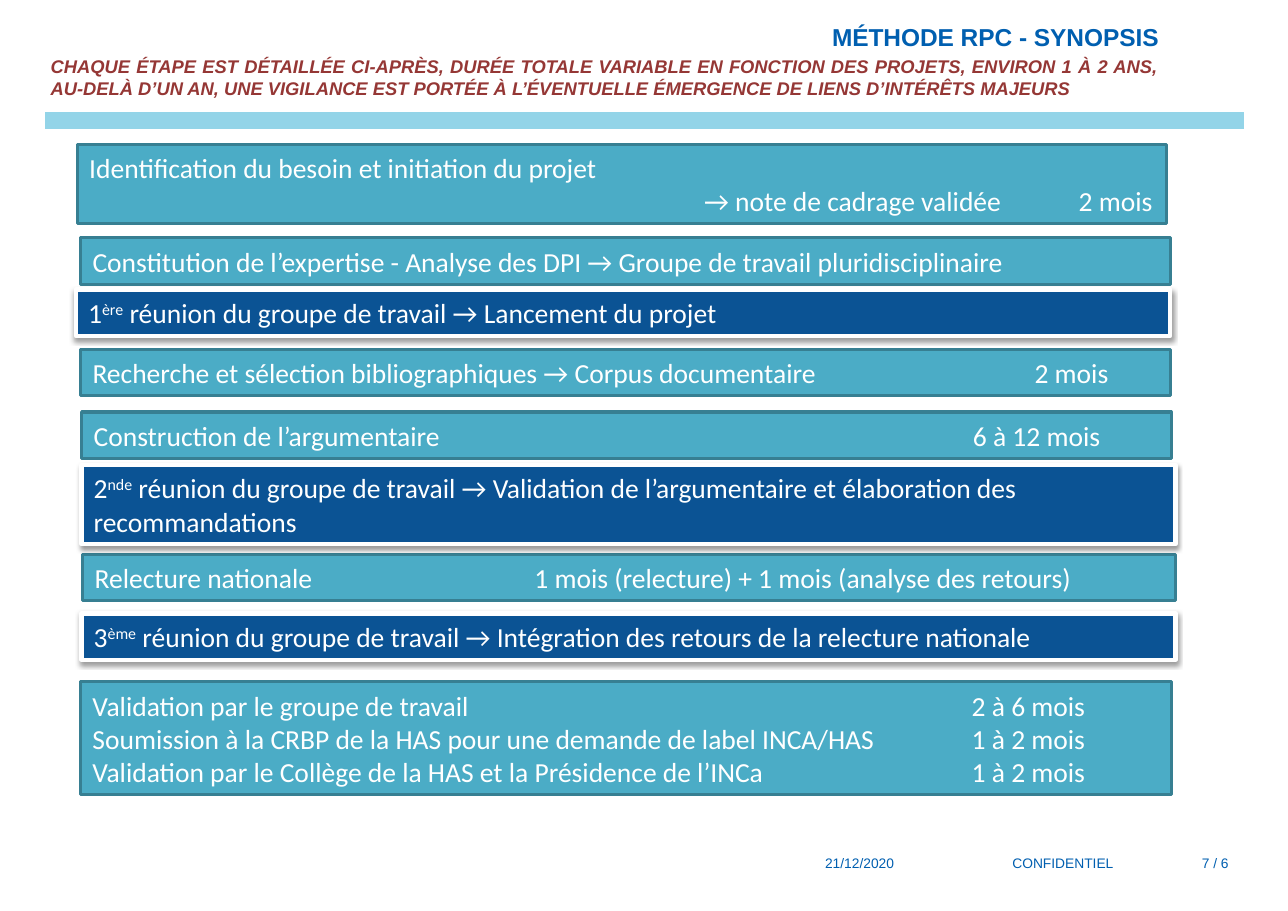
from lxml import etree
from pptx import Presentation
from pptx.dml.color import RGBColor
from pptx.enum.shapes import MSO_SHAPE
from pptx.enum.text import MSO_ANCHOR, MSO_AUTO_SIZE, PP_ALIGN
from pptx.oxml import parse_xml
from pptx.oxml.ns import nsdecls, qn
from pptx.util import Inches, Pt

BLUE = RGBColor(0x00, 0x5F, 0xB0)
BRICK = RGBColor(0x95, 0x37, 0x35)
SKY = RGBColor(0x93, 0xD4, 0xE8)
TEAL = RGBColor(0x4B, 0xAC, 0xC6)
DARK_TEAL = RGBColor(0x37, 0x7F, 0x92)
NAVY = RGBColor(0x0B, 0x53, 0x94)
WHITE = RGBColor(0xFF, 0xFF, 0xFF)

SHADOW = (
    f'<a:effectLst {nsdecls("a")}>'
    '<a:outerShdw blurRad="39370" dist="20320" dir="5400000" rotWithShape="0">'
    '<a:srgbClr val="000000"><a:alpha val="38000"/></a:srgbClr>'
    '</a:outerShdw></a:effectLst>'
)


def add_bar(box, fill, line, line_width):
    bar = slide.shapes.add_shape(MSO_SHAPE.RECTANGLE, *map(Inches, box))
    bar.shadow.inherit = False
    bar.fill.solid()
    bar.fill.fore_color.rgb = fill
    bar.line.color.rgb = line
    bar.line.width = Pt(line_width)
    frame = bar.text_frame
    frame.word_wrap = True
    frame.vertical_anchor = MSO_ANCHOR.TOP
    frame.margin_left = frame.margin_right = Inches(0.11)
    frame.margin_top = frame.margin_bottom = Inches(0.06)
    return bar


def style(paragraph, font_name, size, color, align=PP_ALIGN.LEFT):
    paragraph.alignment = align
    paragraph.font.name = font_name
    paragraph.font.size = Pt(size)
    paragraph.font.color.rgb = color


prs = Presentation()
prs.slide_width, prs.slide_height = Inches(11.69), Inches(8.27)
slide = prs.slides.add_slide(prs.slide_layouts[5])

add_bar((0.41, 1.02, 10.88, 0.15), SKY, SKY, 0.75)

heading = slide.shapes.title
heading.left, heading.top = Inches(0.36), Inches(0.15)
heading.width, heading.height = Inches(10.26), Inches(0.95)
heading_frame = heading.text_frame
heading_frame.auto_size = MSO_AUTO_SIZE.NONE
heading_frame.vertical_anchor = MSO_ANCHOR.TOP
topic = heading_frame.paragraphs[0]
topic.text = "MÉTHODE RPC - SYNOPSIS"
style(topic, "Arial", 16, BLUE, PP_ALIGN.RIGHT)
topic.font.bold = True
notice = heading_frame.add_paragraph()
notice.text = (
    "CHAQUE ÉTAPE EST DÉTAILLÉE CI-APRÈS, DURÉE TOTALE VARIABLE EN FONCTION DES PROJETS, "
    "ENVIRON 1 À 2 ANS, AU-DELÀ D’UN AN, UNE VIGILANCE EST PORTÉE À L’ÉVENTUELLE "
    "ÉMERGENCE DE LIENS D’INTÉRÊTS MAJEURS"
)
style(notice, "Arial", 12, BRICK, PP_ALIGN.JUSTIFY)
notice.space_before = Pt(2.4)
notice.font.bold = notice.font.italic = True

steps = [
    ((0.7, 1.31, 9.89, 0.72), (5.58, 8.98),
     ["Identification du besoin et initiation du projet",
      "\t→ note de cadrage validée\t2 mois"]),
    ((0.73, 2.16, 9.89, 0.42), (),
     ["Constitution de l’expertise - Analyse des DPI → Groupe de travail pluridisciplinaire"]),
    ((0.73, 3.17, 9.89, 0.42), (8.55,),
     ["Recherche et sélection bibliographiques → Corpus documentaire\t2 mois"]),
    ((0.74, 3.74, 9.89, 0.42), (7.98,),
     ["Construction de l’argumentaire\t6 à 12 mois"]),
    ((0.75, 5.03, 9.92, 0.42), (3.99,),
     ["Relecture nationale\t1 mois (relecture) + 1 mois (analyse des retours)"]),
    ((0.73, 6.19, 9.9, 1.02), (7.98,),
     ["Validation par le groupe de travail\t2 à 6 mois",
      "Soumission à la CRBP de la HAS pour une demande de label INCA/HAS\t1 à 2 mois",
      "Validation par le Collège de la HAS et la Présidence de l’INCa\t1 à 2 mois"]),
]
for box, tab_stops, lines in steps:
    frame = add_bar(box, TEAL, DARK_TEAL, 2).text_frame
    for index, line in enumerate(lines):
        paragraph = frame.paragraphs[0] if index == 0 else frame.add_paragraph()
        paragraph.text = line
        if "\t" in line:
            tab_list = etree.SubElement(paragraph._p.get_or_add_pPr(), qn("a:tabLst"))
            for stop in tab_stops:
                etree.SubElement(tab_list, qn("a:tab"), pos=str(Inches(stop)), algn="l")
        style(paragraph, "Calibri", 18, WHITE)

meetings = [
    ((0.69, 2.63, 9.93, 0.42), "1", "ère", "Lancement du projet"),
    ((0.74, 4.22, 9.93, 0.72), "2", "nde",
     "Validation de l’argumentaire et élaboration des recommandations"),
    ((0.74, 5.57, 9.93, 0.42), "3", "ème",
     "Intégration des retours de la relecture nationale"),
]
for box, number, ordinal, outcome in meetings:
    bar = add_bar(box, NAVY, WHITE, 3)
    properties = bar._element.spPr
    properties.replace(properties.find(qn("a:effectLst")), parse_xml(SHADOW))
    paragraph = bar.text_frame.paragraphs[0]
    paragraph.add_run().text = number
    suffix = paragraph.add_run()
    suffix.text = ordinal
    suffix._r.get_or_add_rPr().set("baseline", "30000")
    paragraph.add_run().text = f" réunion du groupe de travail → {outcome}"
    style(paragraph, "Calibri", 18, WHITE)

footers = [(7.39, 1.01, "21/12/2020"), (9.09, 1.26, "CONFIDENTIEL"), (10.81, 0.68, "7 / 6")]
for left, width, label in footers:
    footer = slide.shapes.add_textbox(Inches(left), Inches(7.71), Inches(width), Inches(0.25))
    footer.text_frame.word_wrap = True
    paragraph = footer.text_frame.paragraphs[0]
    paragraph.text = label
    style(paragraph, "Arial", 9, BLUE)

prs.save("out.pptx")
